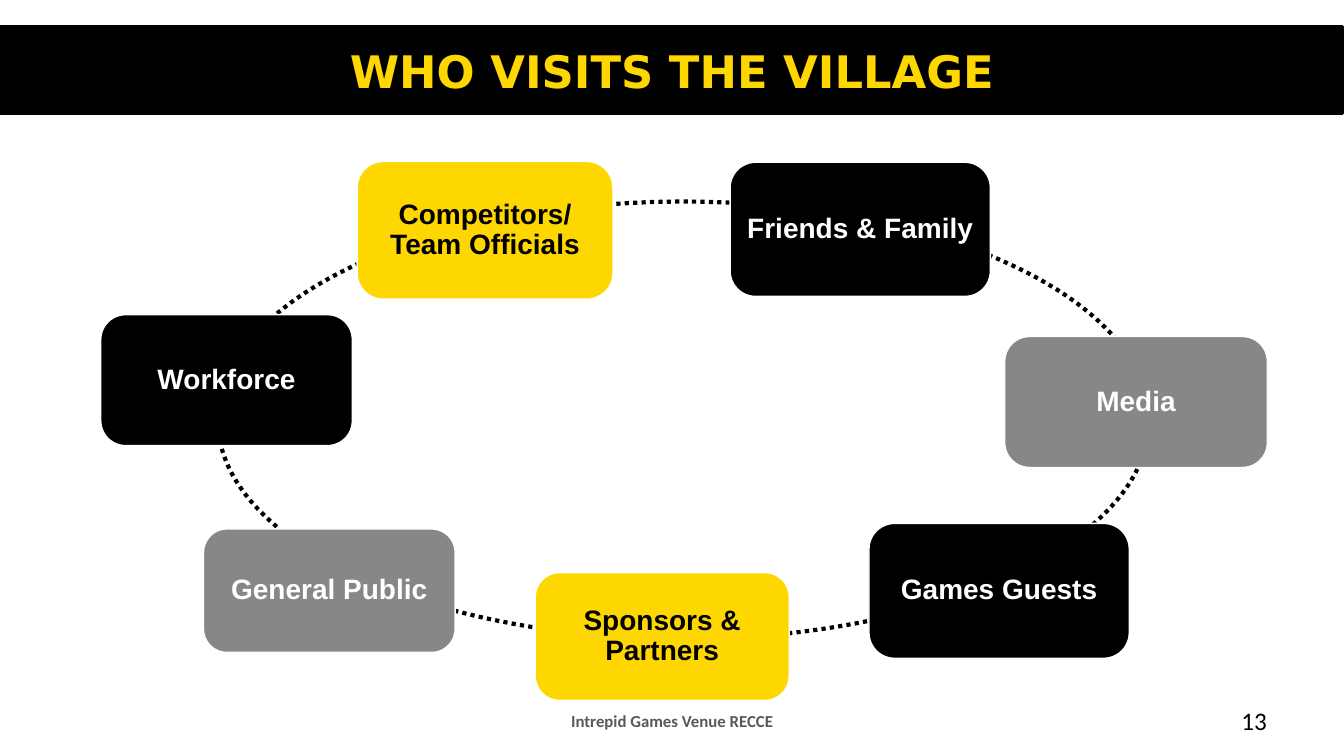
from dataclasses import dataclass

from pptx import Presentation
from pptx.dml.color import RGBColor
from pptx.enum.dml import MSO_LINE
from pptx.enum.shapes import MSO_SHAPE
from pptx.enum.text import MSO_ANCHOR, MSO_AUTO_SIZE, PP_ALIGN
from pptx.util import Cm, Pt


@dataclass(frozen=True)
class Theme:
    black: str = "000000"
    white: str = "FFFFFF"
    gold: str = "FFD700"
    grey: str = "878787"
    footer: str = "58595B"
    title_font: str = "DejaVu Sans"
    card_font: str = "Arial"
    footer_font: str = "Calibri"
    title_size: int = 32
    card_size: int = 20
    number_size: int = 18
    footer_size: int = 12


class Deck:
    """Holds the theme and the current slide."""

    def __init__(self, prs, theme):
        self.theme = theme
        self.s = prs.slides.add_slide(prs.slide_layouts[5])

    def add_text(self, tf, text, font, size, color, bold=True,
                 align=PP_ALIGN.CENTER, spacing=None):
        tf.word_wrap = True
        tf.auto_size = MSO_AUTO_SIZE.NONE
        tf.vertical_anchor = MSO_ANCHOR.MIDDLE
        p = tf.paragraphs[0]
        p.alignment = align
        if spacing:
            p.line_spacing = spacing
        r = p.add_run()
        r.text = text
        r.font.name, r.font.size, r.font.bold = font, Pt(size), bold
        r.font.color.rgb = RGBColor.from_string(color)

    def shape(self, kind, box, fill, line, width):
        sp = self.s.shapes.add_shape(kind, *map(Cm, box))
        sp.shadow.inherit = False
        if fill:
            sp.fill.solid()
            sp.fill.fore_color.rgb = RGBColor.from_string(fill)
        else:
            sp.fill.background()
        sp.line.color.rgb = RGBColor.from_string(line)
        sp.line.width = Pt(width)
        return sp

    def title(self, text, box, bar_box):
        t = self.theme
        sp = self.s.shapes.title
        sp.left, sp.top, sp.width, sp.height = map(Cm, box)
        self.add_text(sp.text_frame, text, t.title_font, t.title_size, t.gold)
        bar = self.shape(MSO_SHAPE.RECTANGLE, bar_box, t.black, t.black, 2)
        sp.element.addprevious(bar.element)  # bar goes behind the title

    def ring(self, box):
        sp = self.shape(MSO_SHAPE.OVAL, box, None, self.theme.black, 3)
        sp.line.dash_style = MSO_LINE.ROUND_DOT

    def card(self, text, box, fill):
        t = self.theme
        sp = self.shape(MSO_SHAPE.ROUNDED_RECTANGLE, box, fill, t.white, 1)
        sp.adjustments[0] = 0.19
        tf = sp.text_frame
        tf.margin_left = tf.margin_right = Cm(0.05)
        color = t.black if fill == t.gold else t.white
        self.add_text(tf, text, t.card_font, t.card_size, color, spacing=0.9)

    def label(self, text, box, size, color, **style):
        sp = self.s.shapes.add_textbox(*map(Cm, box))
        self.add_text(sp.text_frame, text, self.theme.footer_font, size, color, **style)


def main():
    prs = Presentation()
    prs.slide_width, prs.slide_height = Cm(33.87), Cm(19.05)
    t = Theme()
    deck = Deck(prs, t)

    # Title band
    deck.title("WHO VISITS THE VILLAGE", (1.7, 0.69, 30.48, 2.18),
               bar_box=(0.02, 0.66, 33.82, 2.21))

    # Footer
    deck.label("Intrepid Games Venue RECCE", (11.58, 17.65, 10.72, 1.02),
               t.footer_size, t.footer)
    deck.label("13", (24.28, 17.65, 7.9, 1.02), t.number_size, t.black,
               bold=False, align=PP_ALIGN.RIGHT)

    # Ring of visitor groups
    deck.ring((5.49, 5.08, 23.47, 11.02))
    visitors = [
        ("Competitors/ Team Officials", (9, 4.07, 6.45, 3.47), t.gold),
        ("Media", (25.32, 8.48, 6.62, 3.3), t.grey),
        ("Games Guests", (21.9, 13.19, 6.56, 3.4), t.black),
        ("Sponsors & Partners", (13.49, 14.43, 6.4, 3.22), t.gold),
        ("General Public", (5.13, 13.33, 6.34, 3.11), t.grey),
        ("Workforce", (2.54, 7.93, 6.34, 3.3), t.black),
        ("Friends & Family", (18.4, 4.09, 6.56, 3.38), t.black),
    ]
    for text, box, fill in visitors:
        deck.card(text, box, fill)

    prs.save("out.pptx")


if __name__ == "__main__":
    main()
